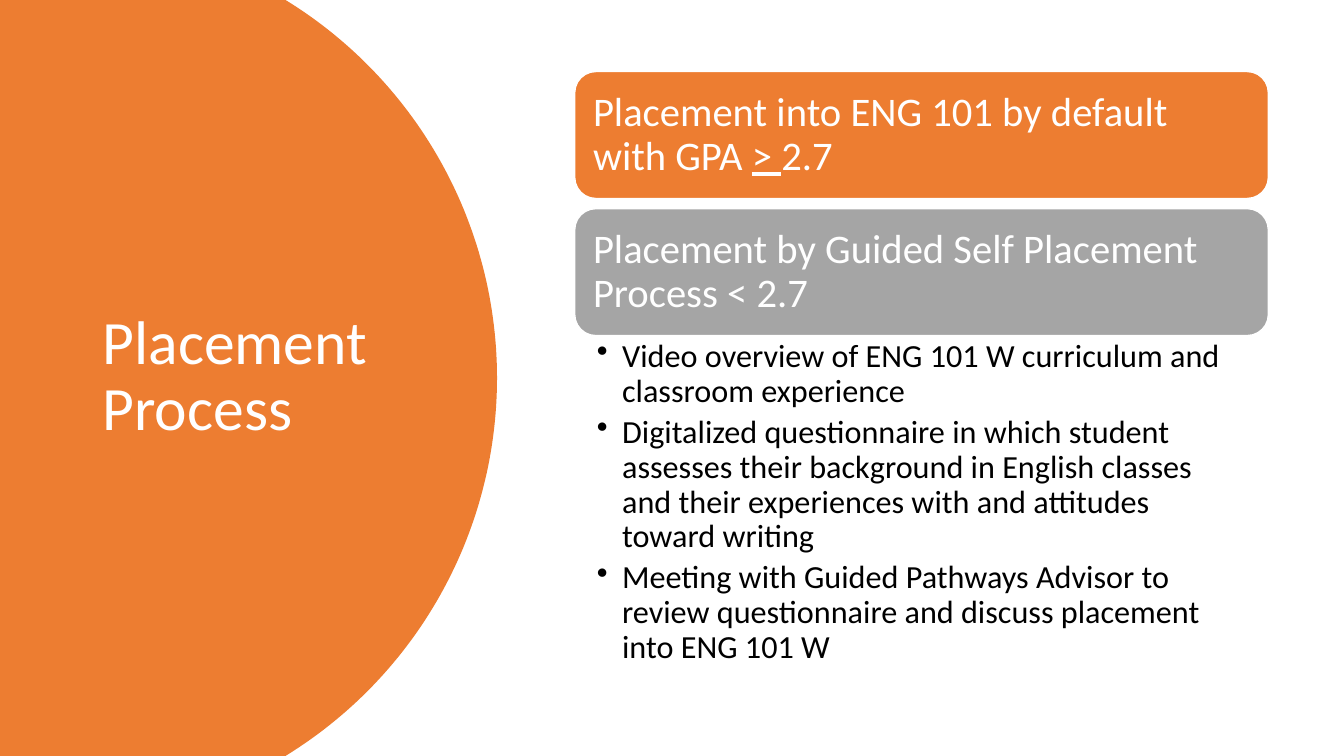
from math import asin, cos, sin

from lxml.etree import SubElement
from pptx import Presentation
from pptx.dml.color import RGBColor
from pptx.enum.shapes import MSO_SHAPE
from pptx.enum.text import MSO_ANCHOR, PP_ALIGN
from pptx.oxml.ns import qn
from pptx.util import Inches, Pt

COLORS = {"orange": "ED7D31", "gray": "A5A5A5", "white": "FFFFFF", "black": "000000"}
WIDTH, HEIGHT = 13.33, 7.5
ARC_CENTER, ARC_RADIUS, ARC_STEPS = 0.53, 4.4, 120
BANNER_LEFT, BANNER_TOP, BANNER_WIDTH, BANNER_HEIGHT = 5.7, 0.71, 6.88, 1.26
BANNER_PITCH = 1.36

BANNERS = [
    ("orange", [("Placement into ENG 101 by default with GPA ", False), ("˃ ", True), ("2.7", False)]),
    ("gray", [("Placement by Guided Self Placement Process ˂ 2.7", False)]),
]
STEPS = [
    "Video overview of ENG 101 W curriculum and classroom experience",
    "Digitalized questionnaire in which student assesses their background in English classes "
    "and their experiences with and attitudes toward writing",
    "Meeting with Guided Pathways Advisor to review questionnaire and discuss placement into ENG 101 W",
]


class PlacementSlide:
    font_name = "Calibri"
    line_spacing = 0.9

    def __init__(self, deck):
        self.page = deck.slides.add_slide(deck.slide_layouts[6])

    def color(self, name):
        return RGBColor.from_string(COLORS[name])

    def fill(self, shape, name):
        shape.shadow.inherit = False
        shape.fill.solid()
        shape.fill.fore_color.rgb = self.color(name)

    def frame(self, shape, insets, anchor):
        frame = shape.text_frame
        frame.word_wrap = True
        frame.vertical_anchor = anchor
        frame.margin_left, frame.margin_top, frame.margin_right, frame.margin_bottom = map(Inches, insets)
        return frame

    def style(self, para, size, color):
        para.alignment = PP_ALIGN.LEFT
        para.line_spacing = self.line_spacing
        para.font.name = self.font_name
        para.font.size = Pt(size)
        para.font.color.rgb = self.color(color)

    def round_panel(self):
        half_angle = asin(HEIGHT / 2 / ARC_RADIUS)
        angles = [half_angle * (2 * step / ARC_STEPS - 1) for step in range(ARC_STEPS + 1)]
        arc = [
            (Inches(ARC_CENTER + ARC_RADIUS * cos(angle)), Inches(HEIGHT / 2 + ARC_RADIUS * sin(angle)))
            for angle in angles
        ]
        builder = self.page.shapes.build_freeform(0, 0)
        builder.add_line_segments(arc + [(0, Inches(HEIGHT))], close=True)
        panel = builder.convert_to_shape()
        self.fill(panel, "orange")
        panel.line.fill.background()

    def title(self, text):
        box = self.page.shapes.add_textbox(Inches(0.92), Inches(0.7), Inches(3.23), Inches(6.09))
        para = self.frame(box, (0.1, 0.05, 0.1, 0.05), MSO_ANCHOR.MIDDLE).paragraphs[0]
        para.text = text
        self.style(para, 44, "white")

    def banner(self, top, color, spans):
        box = self.page.shapes.add_shape(
            MSO_SHAPE.ROUNDED_RECTANGLE,
            Inches(BANNER_LEFT), Inches(top), Inches(BANNER_WIDTH), Inches(BANNER_HEIGHT),
        )
        self.fill(box, color)
        box.line.color.rgb = self.color("white")
        box.line.width = Pt(1)
        para = self.frame(box, (0.12,) * 4, MSO_ANCHOR.MIDDLE).paragraphs[0]
        self.style(para, 29, "white")
        for text, underlined in spans:
            span = para.add_run()
            span.text = text
            if underlined:
                span.font.underline = True

    def bullets(self, items):
        box = self.page.shapes.add_textbox(
            Inches(BANNER_LEFT), Inches(3.33), Inches(BANNER_WIDTH), Inches(3.41)
        )
        frame = self.frame(box, (0.22, 0.04, 0.23, 0.04), MSO_ANCHOR.TOP)
        for index, item in enumerate(items):
            para = frame.add_paragraph() if index else frame.paragraphs[0]
            para.text = item
            para.level = 1
            self.style(para, 23, "black")
            para.space_after = Pt(4.6)
            properties = para._p.get_or_add_pPr()
            properties.set("marL", str(Inches(0.25)))
            properties.set("indent", str(Inches(-0.25)))
            bullet = SubElement(properties, qn("a:buChar"))
            bullet.set("char", "•")
            properties.insert_element_before(bullet, "a:tabLst", "a:defRPr", "a:extLst")


def main():
    deck = Presentation()
    deck.slide_width, deck.slide_height = Inches(WIDTH), Inches(HEIGHT)
    slide = PlacementSlide(deck)
    slide.round_panel()
    slide.title("Placement Process")
    for row, (color, spans) in enumerate(BANNERS):
        slide.banner(BANNER_TOP + row * BANNER_PITCH, color, spans)
    slide.bullets(STEPS)
    deck.save("out.pptx")


if __name__ == "__main__":
    main()
